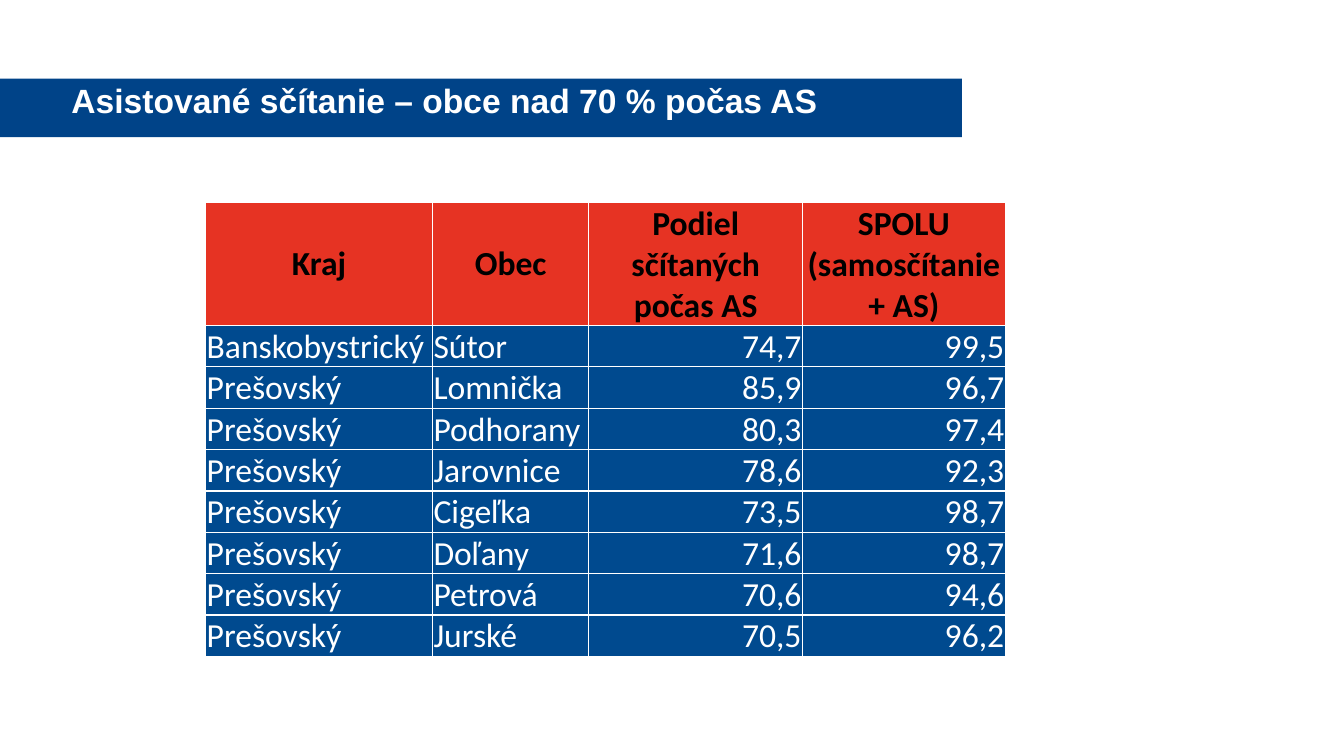
from lxml.etree import SubElement
from pptx import Presentation
from pptx.dml.color import RGBColor
from pptx.enum.shapes import MSO_SHAPE
from pptx.enum.text import MSO_ANCHOR, PP_ALIGN
from pptx.oxml.ns import qn
from pptx.util import Inches, Pt

BAR_BLUE = RGBColor(0x00, 0x43, 0x88)
ROW_BLUE = RGBColor(0x00, 0x4A, 0x8F)
HEADER_RED = RGBColor(0xE6, 0x33, 0x23)
WHITE = RGBColor(0xFF, 0xFF, 0xFF)
BLACK = RGBColor(0x00, 0x00, 0x00)

TITLE = "Asistované sčítanie – obce nad 70 % počas AS"
HEADERS = ["Kraj", "Obec", "Podiel sčítaných počas AS", "SPOLU (samosčítanie + AS)"]
MUNICIPALITIES = [
    ("Banskobystrický", "Sútor", "74,7", "99,5"),
    ("Prešovský", "Lomnička", "85,9", "96,7"),
    ("Prešovský", "Podhorany", "80,3", "97,4"),
    ("Prešovský", "Jarovnice", "78,6", "92,3"),
    ("Prešovský", "Cigeľka", "73,5", "98,7"),
    ("Prešovský", "Doľany", "71,6", "98,7"),
    ("Prešovský", "Petrová", "70,6", "94,6"),
    ("Prešovský", "Jurské", "70,5", "96,2"),
]
COLUMN_WIDTHS = [2.25, 1.55, 2.12, 2.01]
COLUMN_ALIGNS = [PP_ALIGN.LEFT, PP_ALIGN.LEFT, PP_ALIGN.RIGHT, PP_ALIGN.RIGHT]
HEADER_HEIGHT, ROW_HEIGHT = 1.22, 0.41

TITLE_FONT = {"name": "Arial", "size": Pt(24), "bold": True}
HEADER_FONT = {"name": "Calibri", "size": Pt(24), "bold": True}
BODY_FONT = {"name": "Calibri", "size": Pt(24), "bold": False}
CELL_MARGINS = {
    "margin_left": Inches(0.01),
    "margin_right": Inches(0.01),
    "margin_top": Inches(0.01),
    "margin_bottom": 0,
}


def set_attrs(obj, values):
    for name, value in values.items():
        setattr(obj, name, value)


def write(p, text, font, color):
    r = p.add_run()
    r.text = text
    set_attrs(r.font, font)
    r.font.color.rgb = color


def add_bar(s):
    sp = s.shapes.add_shape(
        MSO_SHAPE.RECTANGLE, 0, Inches(0.78), Inches(9.54), Inches(0.58)
    )
    sp.shadow.inherit = False
    sp.fill.solid()
    sp.fill.fore_color.rgb = BAR_BLUE
    sp.line.fill.background()


def add_title(s):
    sp = s.shapes.add_textbox(Inches(0.61), Inches(0.79), Inches(8.92), Inches(0.46))
    tf = sp.text_frame
    set_attrs(tf, {"word_wrap": True, "vertical_anchor": MSO_ANCHOR.MIDDLE})
    p = tf.paragraphs[0]
    p.line_spacing = 0.9
    write(p, TITLE, TITLE_FONT, WHITE)


def add_borders(cell):
    tcPr = cell._tc.get_or_add_tcPr()
    for i, side in enumerate(("lnL", "lnR", "lnT", "lnB")):
        ln = tcPr.makeelement(qn(f"a:{side}"), {"w": str(Pt(1))})
        fill = SubElement(ln, qn("a:solidFill"))
        SubElement(fill, qn("a:srgbClr"), val=str(WHITE))
        tcPr.insert(i, ln)


def fill_cell(cell, text, font, color, background, align, anchor):
    set_attrs(cell, {**CELL_MARGINS, "vertical_anchor": anchor})
    cell.fill.solid()
    cell.fill.fore_color.rgb = background
    add_borders(cell)
    p = cell.text_frame.paragraphs[0]
    p.alignment = align
    write(p, text, font, color)


def add_census_table(s):
    count = len(MUNICIPALITIES)
    table = s.shapes.add_table(
        count + 1, len(HEADERS), Inches(2.04), Inches(2.01),
        Inches(sum(COLUMN_WIDTHS)), Inches(HEADER_HEIGHT + count * ROW_HEIGHT),
    ).table
    table.horz_banding = False
    for column, width in zip(table.columns, COLUMN_WIDTHS):
        column.width = Inches(width)
    for i, row in enumerate(table.rows):
        row.height = Inches(ROW_HEIGHT if i else HEADER_HEIGHT)
    for j, header in enumerate(HEADERS):
        fill_cell(table.cell(0, j), header, HEADER_FONT, BLACK, HEADER_RED,
                  PP_ALIGN.CENTER, MSO_ANCHOR.MIDDLE)
    for i, values in enumerate(MUNICIPALITIES, 1):
        for j, value in enumerate(values):
            fill_cell(table.cell(i, j), value, BODY_FONT, WHITE, ROW_BLUE,
                      COLUMN_ALIGNS[j], MSO_ANCHOR.BOTTOM)


def main():
    prs = Presentation()
    prs.slide_width, prs.slide_height = Inches(13.33), Inches(7.5)
    s = prs.slides.add_slide(prs.slide_layouts[6])
    add_bar(s)
    add_title(s)
    add_census_table(s)
    prs.save("out.pptx")


if __name__ == "__main__":
    main()
